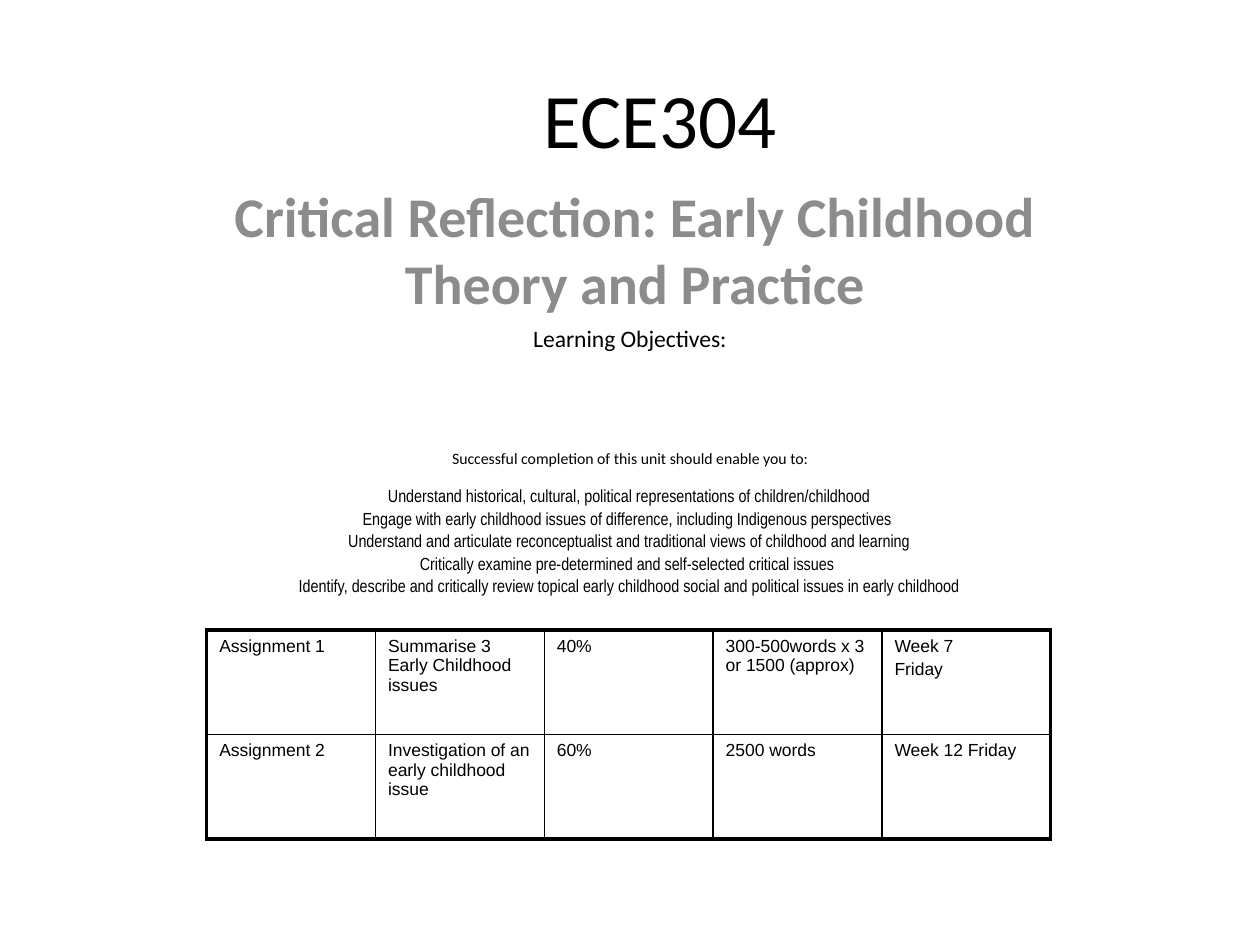
from lxml import etree
from pptx import Presentation
from pptx import util as u
from pptx.dml.color import RGBColor
from pptx.enum import text
from pptx.oxml import ns

PX = 9144  # 100 px to the inch
COLORS = {"ink": "000000", "subtitle": "8C8C8C"}

deck = Presentation()
deck.slide_width, deck.slide_height = 1000 * PX, 750 * PX
slide = deck.slides.add_slide(deck.slide_layouts[6])


def write(frame, lines, font, size, color="ink", bold=False, align=text.PP_ALIGN.CENTER,
          before=0, spacing=None):
    frame.word_wrap = True
    frame.text = "\n".join(lines)
    for paragraph in frame.paragraphs:
        paragraph.alignment = align
        paragraph.space_before = u.Pt(before)
        if spacing:
            paragraph.line_spacing = spacing
        for run in paragraph.runs:
            run.font.name = font
            run.font.size = u.Pt(size)
            run.font.bold = bold
            run.font.color.rgb = RGBColor.from_string(COLORS[color])


def text_area(left, top, width, height):
    return slide.shapes.add_textbox(left * PX, top * PX, width * PX, height * PX).text_frame


# Unit code and name
unit_code = text_area(106, 13, 850, 161)
unit_code.vertical_anchor = text.MSO_ANCHOR.MIDDLE
write(unit_code, ["ECE304 "], "Calibri", 44)

unit_name = text_area(154, 139, 700, 192)
write(unit_name, ["Critical Reflection: Early Childhood Theory and Practice"],
      "Calibri", 32, color="subtitle", bold=True, before=6.4)

# Heading and lead-in of the objectives
objectives_intro = text_area(50, 257, 900, 125)
objectives_intro.margin_top = 0
write(objectives_intro,
      ["Learning Objectives:", "Successful completion of this unit should enable you to:"],
      "Calibri", 13.5)
lead_in = objectives_intro.paragraphs[1]
lead_in.space_before = u.Pt(55)
lead_in.runs[0].font.size = u.Pt(9)

# Objectives
objectives = text_area(88, 382, 822, 118)
write(objectives, [
    "Understand historical, cultural, political representations of children/childhood",
    "Engage with early childhood issues of difference, including Indigenous perspectives ",
    "Understand and articulate reconceptualist and traditional views of childhood and learning",
    "Critically examine pre-determined and self-selected critical issues ",
    "Identify, describe and critically review topical early childhood social and political "
    "issues in early childhood",
], "Arial Narrow", 10, before=2, spacing=0.9)

# Assignments table: task, topic, weight, length, due date
ASSIGNMENTS = [
    [["Assignment 1"], ["Summarise 3 Early Childhood issues"], ["40%"],
     ["300-500words x 3 or 1500 (approx)"], ["Week 7", "Friday"]],
    [["Assignment 2"], ["Investigation of an early childhood issue"], ["60%"],
     ["2500 words"], ["Week 12 Friday"]],
]
last_row, last_col = len(ASSIGNMENTS) - 1, len(ASSIGNMENTS[0]) - 1
assignments = slide.shapes.add_table(last_row + 1, last_col + 1, 164 * PX, 500 * PX,
                                     670 * PX, 166 * PX).table
assignments.first_row = assignments.horz_banding = False

for r, assignment in enumerate(ASSIGNMENTS):
    assignments.rows[r].height = 83 * PX
    for c, lines in enumerate(assignment):
        cell = assignments.cell(r, c)
        write(cell.text_frame, lines, "Arial", 10, align=text.PP_ALIGN.LEFT, before=2)
        # Heavy outer frame, thin inner rules
        outer_edges = {"lnL": c == 0, "lnR": c == last_col, "lnT": r == 0, "lnB": r == last_row}
        properties = cell._tc.get_or_add_tcPr()
        for edge, is_outer in outer_edges.items():
            width = u.Pt(2.25 if is_outer else 1)
            rule = etree.SubElement(properties, ns.qn(f"a:{edge}"), w=str(int(width)))
            fill = etree.SubElement(rule, ns.qn("a:solidFill"))
            etree.SubElement(fill, ns.qn("a:srgbClr"), val=COLORS["ink"])
        cell.fill.background()

deck.save("out.pptx")
